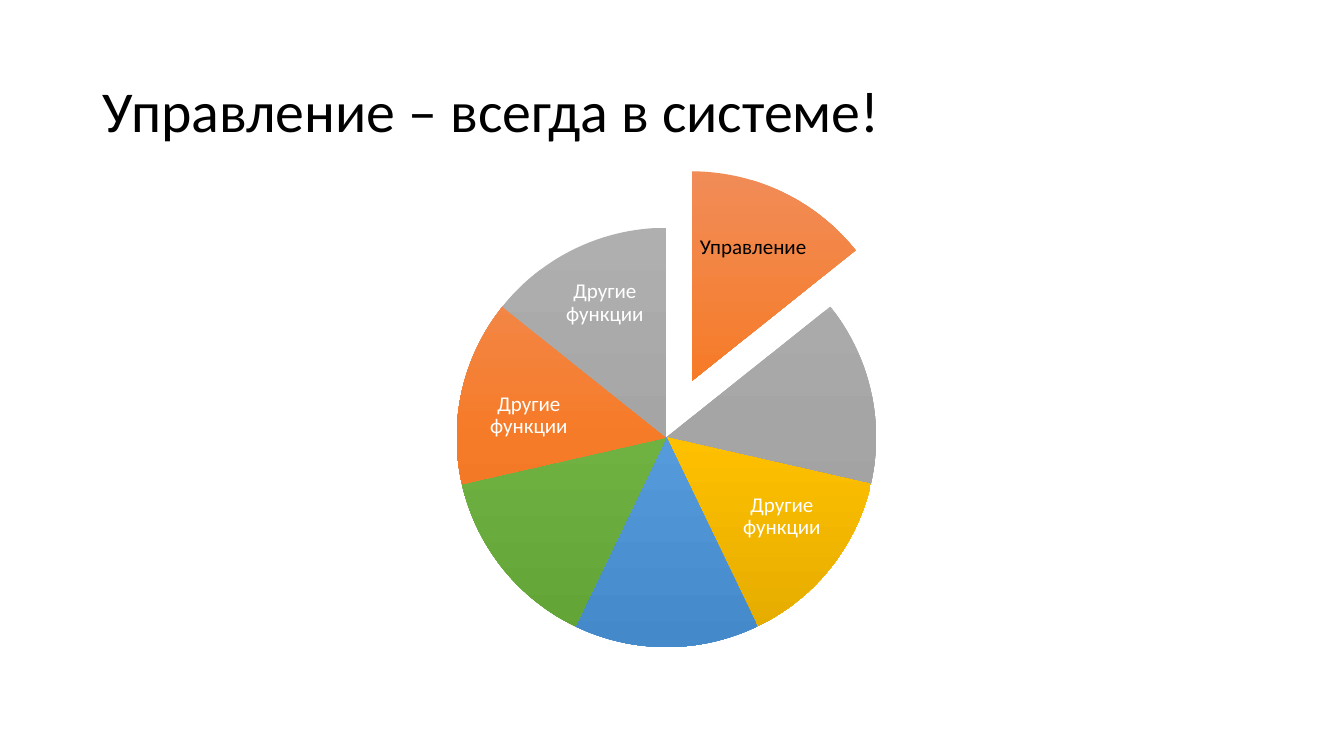
from copy import deepcopy
from dataclasses import dataclass

from pptx import Presentation
from pptx import util as u
from pptx.dml.color import RGBColor
from pptx.enum import shapes, text
from pptx.oxml.ns import qn

BLACK = RGBColor(0x00, 0x00, 0x00)
WHITE = RGBColor(0xFF, 0xFF, 0xFF)
ORANGE = (RGBColor(0xF1, 0x8C, 0x57), RGBColor(0xF6, 0x7B, 0x28), RGBColor(0xE5, 0x6C, 0x19))
GRAY = (RGBColor(0xAF, 0xAF, 0xAF), RGBColor(0xA5, 0xA5, 0xA5), RGBColor(0x93, 0x93, 0x93))
GOLD = (RGBColor(0xFF, 0xC6, 0x4B), RGBColor(0xFF, 0xC0, 0x00), RGBColor(0xE3, 0xAB, 0x00))
BLUE = (RGBColor(0x71, 0xA6, 0xDB), RGBColor(0x55, 0x9B, 0xDB), RGBColor(0x44, 0x8A, 0xCA))
GREEN = (RGBColor(0x81, 0xB8, 0x61), RGBColor(0x6F, 0xB2, 0x42), RGBColor(0x62, 0xA3, 0x36))

FONT = "Calibri"
SIZE = 4.16
HOME = (4.53, 2.26)
TURN = 216
TOP = 162
OTHER = "Другие функции"


@dataclass
class Label:
    words: str
    box: tuple[float, float, float, float]
    size: float = 15
    color: RGBColor = WHITE
    align: text.PP_ALIGN = text.PP_ALIGN.CENTER
    inset: float = 0.02


@dataclass
class Slice:
    tones: tuple[RGBColor, RGBColor, RGBColor]
    label: Label | None = None
    place: tuple[float, float] = HOME


TITLE = Label("Управление – всегда в системе!", (0.92, 0.4, 11.5, 1.45),
              41.3, BLACK, text.PP_ALIGN.LEFT, 0.1)
SLICES = [
    Slice(ORANGE, Label("Управление", (6.9, 2.1, 1.14, 0.72), color=BLACK), (4.78, 1.7)),
    Slice(GRAY),
    Slice(GOLD, Label(OTHER, (7.21, 4.73, 1.09, 0.79))),
    Slice(BLUE),
    Slice(GREEN),
    Slice(ORANGE, Label(OTHER, (4.64, 3.74, 1.21, 0.77))),
    Slice(GRAY, Label(OTHER, (5.43, 2.65, 1.14, 0.72))),
]


def write(tree, label: Label) -> None:
    box = tree.add_textbox(*map(u.Inches, label.box))
    frame = box.text_frame
    frame.word_wrap = True
    frame.vertical_anchor = text.MSO_ANCHOR.MIDDLE
    frame.margin_left = frame.margin_right = u.Inches(label.inset)
    frame.margin_top = frame.margin_bottom = u.Inches(label.inset / 2 if label is TITLE else label.inset)
    para = frame.paragraphs[0]
    para.text = label.words
    para.alignment = label.align
    para.line_spacing = 0.9
    para.font.name = FONT
    para.font.size = u.Pt(label.size)
    para.font.color.rgb = label.color


def shade(shape, tones: tuple[RGBColor, RGBColor, RGBColor]) -> None:
    shape.fill.gradient()
    shape.fill.gradient_angle = 270
    stops = shape._element.spPr.find(qn("a:gradFill")).find(qn("a:gsLst"))
    stops.insert(1, deepcopy(stops[0]))
    for i, (stop, tone) in enumerate(zip(shape.fill.gradient_stops, tones)):
        stop.position = i / 2
        stop.color.rgb = tone


def carve(tree, part: Slice, index: int) -> None:
    step = TURN / len(SLICES)
    left, top = part.place
    wedge = tree.add_shape(shapes.MSO_SHAPE.PIE, *map(u.Inches, (left, top, SIZE, SIZE)))
    wedge.adjustments[0] = (TOP + index * step) % TURN
    wedge.adjustments[1] = (TOP + (index + 1) * step) % TURN
    wedge.shadow.inherit = False
    wedge.line.fill.background()
    shade(wedge, part.tones)
    if part.label:
        write(tree, part.label)


def main() -> None:
    deck = Presentation()
    deck.slide_width = u.Inches(13.33)
    deck.slide_height = u.Inches(7.5)
    slide = deck.slides.add_slide(deck.slide_layouts[6])
    write(slide.shapes, TITLE)
    pie = slide.shapes.add_group_shape()
    for index, part in enumerate(SLICES):
        carve(pie.shapes, part, index)
    deck.save("out.pptx")


if __name__ == "__main__":
    main()
